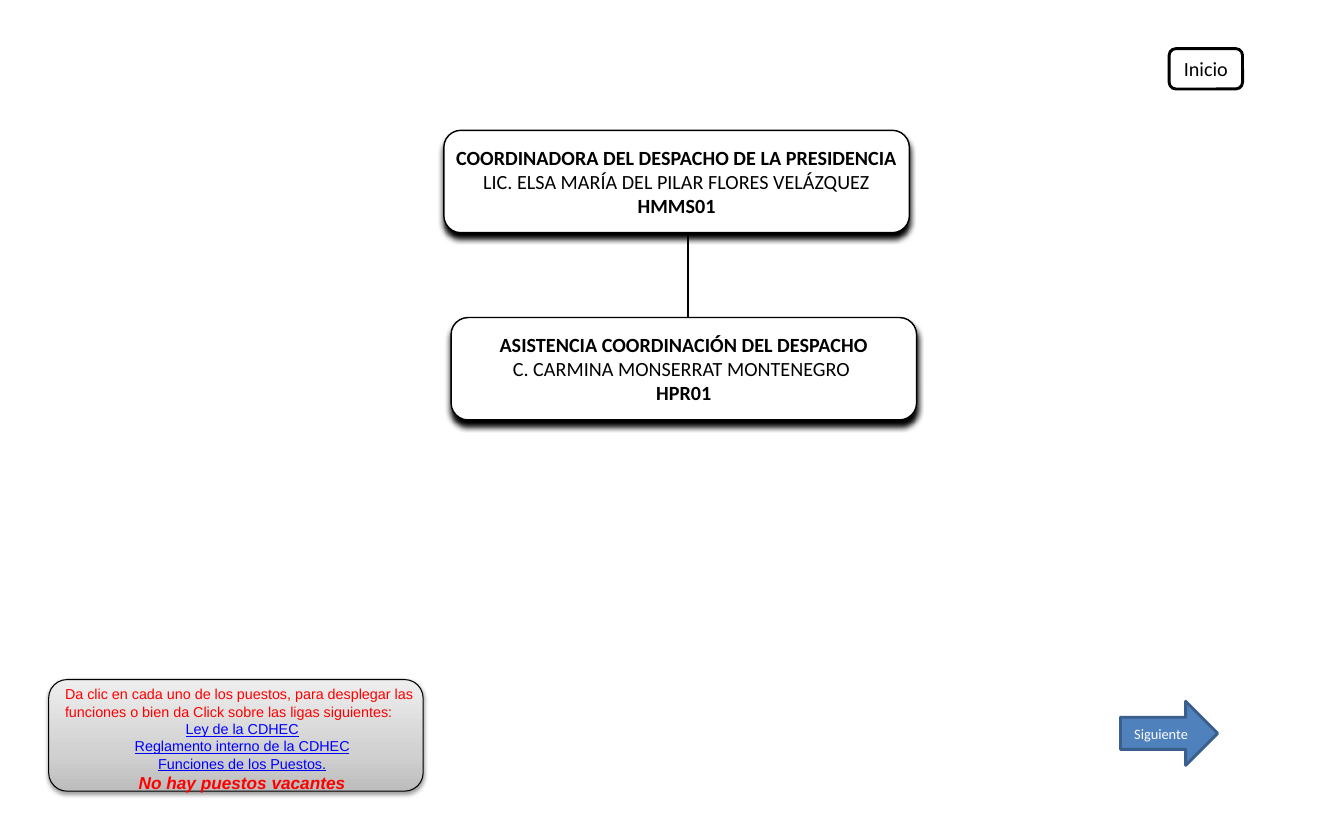
from lxml.etree import SubElement
from pptx import Presentation
from pptx.dml.color import RGBColor
from pptx.enum.shapes import MSO_CONNECTOR as Connector, MSO_SHAPE as Shape
from pptx.enum.text import MSO_ANCHOR as Anchor, PP_ALIGN as Align
from pptx.oxml.ns import qn
from pptx.util import Emu, Pt

PX = 9144
BLACK = RGBColor(0, 0, 0)
WHITE = RGBColor(255, 255, 255)
RED = RGBColor(255, 0, 0)
LINK_BLUE = RGBColor(0, 0, 255)
ARROW_BLUE = RGBColor(0x4F, 0x81, 0xBD)
ARROW_EDGE = RGBColor(0x3A, 0x5F, 0x8C)
GRAYS = [(0, RGBColor(0xBD, 0xBD, 0xBD)), (35, RGBColor(0xD1, 0xD1, 0xD1)),
         (100, RGBColor(0xEE, 0xEE, 0xEE))]


def px(*lengths):
    return [Emu(length * PX) for length in lengths]


def add_color(parent, color):
    return SubElement(parent, qn("a:srgbClr"), val=str(color))


def add_panel(slide, kind, box, fill, line, width):
    shape = slide.shapes.add_shape(kind, *px(*box))
    shape.shadow.inherit = False
    shape.fill.solid()
    shape.fill.fore_color.rgb = fill
    shape.line.color.rgb = line
    shape.line.width = Pt(width)
    return shape


def add_shadow(shape, opacity, blur, distance):
    effects = shape._element.spPr.find(qn("a:effectLst"))
    shadow = SubElement(effects, qn("a:outerShdw"), blurRad=str(Pt(blur)),
                        dist=str(Pt(distance)), dir="5400000", rotWithShape="0")
    SubElement(add_color(shadow, BLACK), qn("a:alpha"), val=str(opacity * 1000))


def shade(shape, stops):
    shape.fill.gradient()
    shape.fill.gradient_angle = 90
    stop_list = shape._element.spPr.find(qn("a:gradFill")).find(qn("a:gsLst"))
    for stop in list(stop_list):
        stop_list.remove(stop)
    for position, color in stops:
        add_color(SubElement(stop_list, qn("a:gs"), pos=str(position * 1000)), color)


def write(frame, lines, font_name, size, color):
    for index, text in enumerate(lines):
        paragraph = frame.add_paragraph() if index else frame.paragraphs[0]
        paragraph.text = text
        paragraph.alignment = Align.CENTER
        paragraph.font.name = font_name
        paragraph.font.size = Pt(size)
        paragraph.font.color.rgb = color
    return frame.paragraphs


def position_card(slide, box, lines):
    card = add_panel(slide, Shape.ROUNDED_RECTANGLE, box, WHITE, BLACK, 1)
    add_shadow(card, 100, 4, 4)
    frame = card.text_frame
    frame.word_wrap = False
    frame.vertical_anchor = Anchor.MIDDLE
    frame.margin_left, frame.margin_right = px(17, 17)
    frame.margin_top, frame.margin_bottom = px(9, 9)
    role, _, code = write(frame, lines, "Calibri", 14, BLACK)
    role.font.bold = code.font.bold = True


def button(slide, kind, box, label, size, fill, line, color):
    shape = add_panel(slide, kind, box, fill, line, 2)
    shape.text_frame.vertical_anchor = Anchor.MIDDLE
    write(shape.text_frame, [label], "Calibri", size, color)


def reporting_line(slide, x, top, bottom):
    line = slide.shapes.add_connector(Connector.STRAIGHT, *px(x, top, x, bottom))
    line.line.color.rgb = BLACK
    line.line.width = Pt(0.75)
    SubElement(line._element.spPr, qn("a:effectLst"))


def help_panel(slide, box):
    left, top, width, height = box
    panel = add_panel(slide, Shape.ROUNDED_RECTANGLE, box, WHITE, BLACK, 0.75)
    shade(panel, GRAYS)
    add_shadow(panel, 38, 3.1, 1.6)
    frame = slide.shapes.add_textbox(*px(left + 6, top + 1, width, height + 6)).text_frame
    frame.word_wrap = True
    intro, *links, vacancies = write(frame, [
        "Da clic en cada uno de los puestos, para desplegar las "
        "funciones o bien da Click sobre las ligas siguientes:",
        "Ley de la CDHEC",
        "Reglamento interno de la CDHEC",
        "Funciones de los Puestos.",
        "No hay puestos vacantes",
    ], "Arial", 10, RED)
    intro.alignment = Align.LEFT
    for link in links:
        link.font.color.rgb = LINK_BLUE
        link.font.underline = True
    vacancies.font.size = Pt(12)
    vacancies.font.bold = vacancies.font.italic = True


def main():
    presentation = Presentation()
    presentation.slide_width, presentation.slide_height = px(1299, 788)
    slide = presentation.slides.add_slide(presentation.slide_layouts[6])
    position_card(slide, (429, 126, 450, 99), [
        "COORDINADORA DEL DESPACHO DE LA PRESIDENCIA",
        "LIC. ELSA MARÍA DEL PILAR FLORES VELÁZQUEZ", "HMMS01"])
    button(slide, Shape.ROUNDED_RECTANGLE, (1130, 47, 71, 39), "Inicio", 14,
           WHITE, BLACK, BLACK)
    help_panel(slide, (47, 657, 362, 108))
    button(slide, Shape.RIGHT_ARROW, (1083, 678, 94, 62), "Siguiente", 10,
           ARROW_BLUE, ARROW_EDGE, WHITE)
    reporting_line(slide, 665, 225, 307)
    position_card(slide, (436, 307, 450, 99), [
        "ASISTENCIA COORDINACIÓN DEL DESPACHO",
        "C. CARMINA MONSERRAT MONTENEGRO ", "HPR01"])
    presentation.save("out.pptx")


if __name__ == "__main__":
    main()
